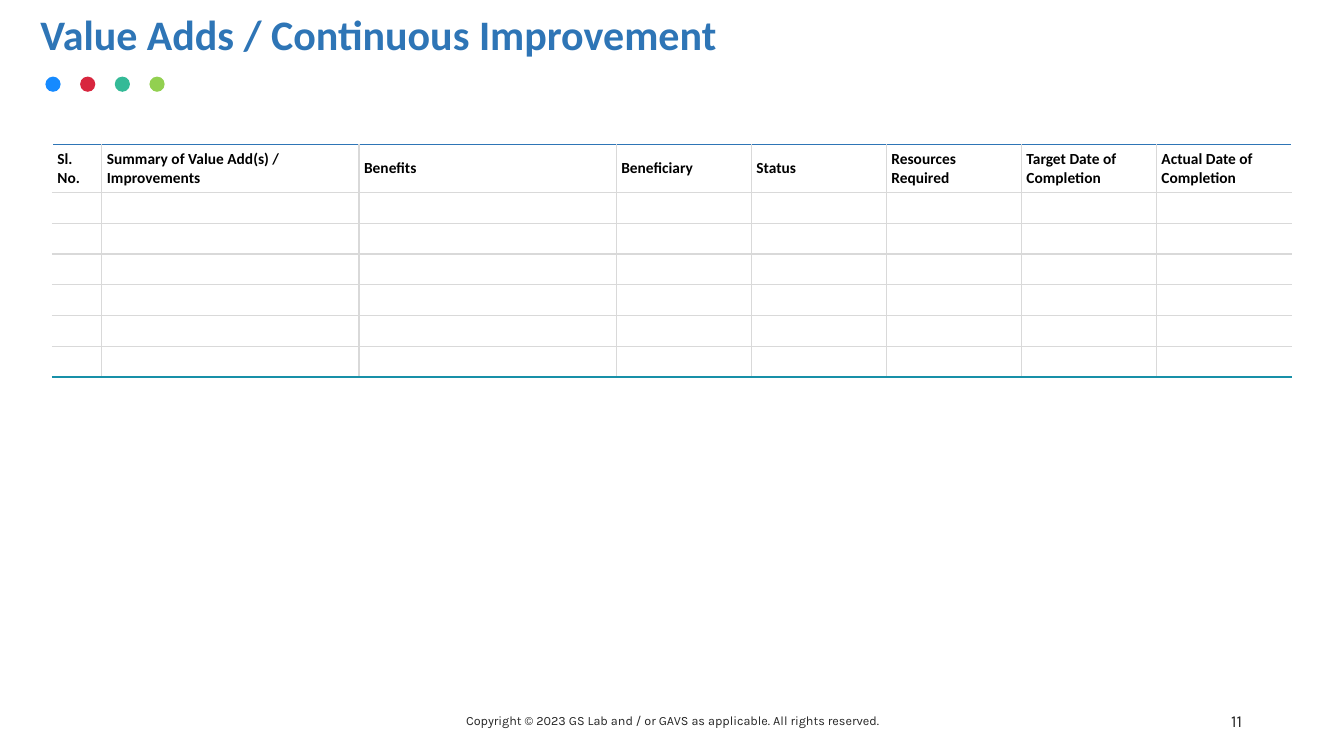
import dataclasses

import lxml.etree
import pptx
import pptx.dml.color
import pptx.enum.shapes
import pptx.enum.text
import pptx.oxml.ns
import pptx.presentation
import pptx.slide
import pptx.table
import pptx.text.text
import pptx.util

RGBColor = pptx.dml.color.RGBColor
Align = pptx.enum.text.PP_ALIGN
Anchor = pptx.enum.text.MSO_ANCHOR

BLUE = RGBColor(0x2E, 0x75, 0xB6)
TEAL = RGBColor(0x18, 0x90, 0xA8)
GRID_GREY = RGBColor(0xD9, 0xD9, 0xD9)
FOOTER_GREY = RGBColor(0x26, 0x26, 0x26)
BLACK = RGBColor(0, 0, 0)
WHITE = RGBColor(0xFF, 0xFF, 0xFF)
DOT_COLORS = (
    RGBColor(0x16, 0x8A, 0xFF),
    RGBColor(0xD8, 0x26, 0x3E),
    RGBColor(0x34, 0xBA, 0x97),
    RGBColor(0x92, 0xD0, 0x50),
)

SLIDE_WIDTH = pptx.util.Inches(13.33)
SLIDE_HEIGHT = pptx.util.Inches(7.5)


def across(percent: float) -> int:
    return round(SLIDE_WIDTH * percent / 100)


def down(percent: float) -> int:
    return round(SLIDE_HEIGHT * percent / 100)


@dataclasses.dataclass(frozen=True)
class Area:
    """A rectangle in percent of the slide's width and height."""
    left: float
    top: float
    width: float
    height: float

    def lengths(self) -> tuple[int, int, int, int]:
        return across(self.left), down(self.top), across(self.width), down(self.height)


@dataclasses.dataclass(frozen=True)
class FooterText:
    text: str
    area: Area
    size: int
    alignment: Align


@dataclasses.dataclass(frozen=True)
class Column:
    heading: str
    width: float


TITLE_AREA = Area(2.25, 1.2, 86.27, 7.47)
TITLE_FORMAT = {"name": "Calibri", "size": pptx.util.Pt(30), "bold": True}
HEADING_FORMAT = {"name": "Calibri", "size": pptx.util.Pt(11), "bold": True}

FOOTER_TEXTS = (
    FooterText(
        "Copyright © 2023 GS Lab and / or GAVS as applicable. All rights reserved.",
        Area(33.16, 92.67, 33.76, 5.33), 9, Align.CENTER,
    ),
    FooterText("11", Area(70.67, 92.67, 22.5, 5.33), 12, Align.RIGHT),
)

WIDE, NARROW = 19.14, 10.05
COLUMNS = (
    Column("Sl. No.", 3.68),
    Column("Summary of Value Add(s) / Improvements", WIDE),
    Column("Benefits", WIDE),
    Column("Beneficiary", NARROW),
    Column("Status", NARROW),
    Column("Resources Required", NARROW),
    Column("Target Date of Completion", NARROW),
    Column("Actual Date of Completion", NARROW),
)
EMPTY_ROWS = 6
HEADER_HEIGHT, ROW_HEIGHT = 6.4, 4.07
TABLE_AREA = Area(
    3.9, 19.07, sum(column.width for column in COLUMNS),
    HEADER_HEIGHT + EMPTY_ROWS * ROW_HEIGHT,
)

DOT_LEFT, DOT_TOP, DOT_PITCH, DOT_DIAMETER = 3.38, 10.13, 2.58, 1.13


def write(para: pptx.text.text._Paragraph, text: str, values: dict, color: RGBColor) -> None:
    span = para.add_run()
    span.text = text
    for name, value in values.items():
        setattr(span.font, name, value)
    span.font.color.rgb = color


def add_title(page: pptx.slide.Slide, text: str) -> None:
    title = page.shapes.title
    title.left, title.top, title.width, title.height = TITLE_AREA.lengths()
    title.text_frame.auto_size = pptx.enum.text.MSO_AUTO_SIZE.NONE
    title.text_frame.vertical_anchor = Anchor.MIDDLE
    para = title.text_frame.paragraphs[0]
    para.alignment = Align.LEFT
    para.line_spacing = 0.9
    write(para, text, TITLE_FORMAT, BLUE)


def add_dots(page: pptx.slide.Slide) -> None:
    for index, color in enumerate(DOT_COLORS):
        diameter = across(DOT_DIAMETER)
        dot = page.shapes.add_shape(
            pptx.enum.shapes.MSO_SHAPE.OVAL,
            across(DOT_LEFT + index * DOT_PITCH), down(DOT_TOP), diameter, diameter,
        )
        dot.shadow.inherit = False
        dot.fill.solid()
        dot.fill.fore_color.rgb = color
        dot.line.fill.background()


def add_footer_text(page: pptx.slide.Slide, footer: FooterText) -> None:
    box = page.shapes.add_textbox(*footer.area.lengths())
    box.text_frame.word_wrap = True
    box.text_frame.vertical_anchor = Anchor.MIDDLE
    para = box.text_frame.paragraphs[0]
    para.alignment = footer.alignment
    values = {"name": "Karla", "size": pptx.util.Pt(footer.size)}
    write(para, footer.text, values, FOOTER_GREY)


def set_borders(cell: pptx.table._Cell, colors: dict[str, RGBColor]) -> None:
    properties = cell._tc.get_or_add_tcPr()
    qn = pptx.oxml.ns.qn
    for position, (side, color) in enumerate(colors.items()):
        line = lxml.etree.Element(qn(f"a:ln{side}"), w=str(pptx.util.Pt(1)))
        fill = lxml.etree.SubElement(line, qn("a:solidFill"))
        lxml.etree.SubElement(fill, qn("a:srgbClr"), val=str(color))
        properties.insert(position, line)


def add_table(page: pptx.slide.Slide) -> None:
    row_count, column_count = EMPTY_ROWS + 1, len(COLUMNS)
    table = page.shapes.add_table(row_count, column_count, *TABLE_AREA.lengths()).table
    table.first_row = table.horz_banding = False
    for index, column in enumerate(COLUMNS):
        table.columns[index].width = across(column.width)

    for row_index, row in enumerate(table.rows):
        row.height = down(ROW_HEIGHT if row_index else HEADER_HEIGHT)
        for column_index, cell in enumerate(row.cells):
            cell.fill.background()
            cell.vertical_anchor = Anchor.MIDDLE
            for side in ("left", "right", "top", "bottom"):
                setattr(cell, f"margin_{side}", pptx.util.Inches(0.05))
            # Outer edges have their own colours
            set_borders(cell, {
                "L": GRID_GREY if column_index else WHITE,
                "R": GRID_GREY if column_index < column_count - 1 else WHITE,
                "T": GRID_GREY if row_index else BLUE,
                "B": GRID_GREY if row_index < row_count - 1 else TEAL,
            })
            para = cell.text_frame.paragraphs[0]
            if row_index == 0:
                write(para, COLUMNS[column_index].heading, HEADING_FORMAT, BLACK)
            else:
                # A small end mark keeps empty rows at their set height
                lxml.etree.SubElement(para._p, pptx.oxml.ns.qn("a:endParaRPr"), sz="1100")


def main() -> None:
    deck = pptx.Presentation()
    deck.slide_width, deck.slide_height = SLIDE_WIDTH, SLIDE_HEIGHT
    page = deck.slides.add_slide(deck.slide_layouts.get_by_name("Title Only"))

    # Heading
    add_dots(page)
    add_title(page, "Value Adds / Continuous Improvement")
    # Footer
    for footer in FOOTER_TEXTS:
        add_footer_text(page, footer)
    # Improvement log
    add_table(page)

    deck.save("out.pptx")


if __name__ == "__main__":
    main()
